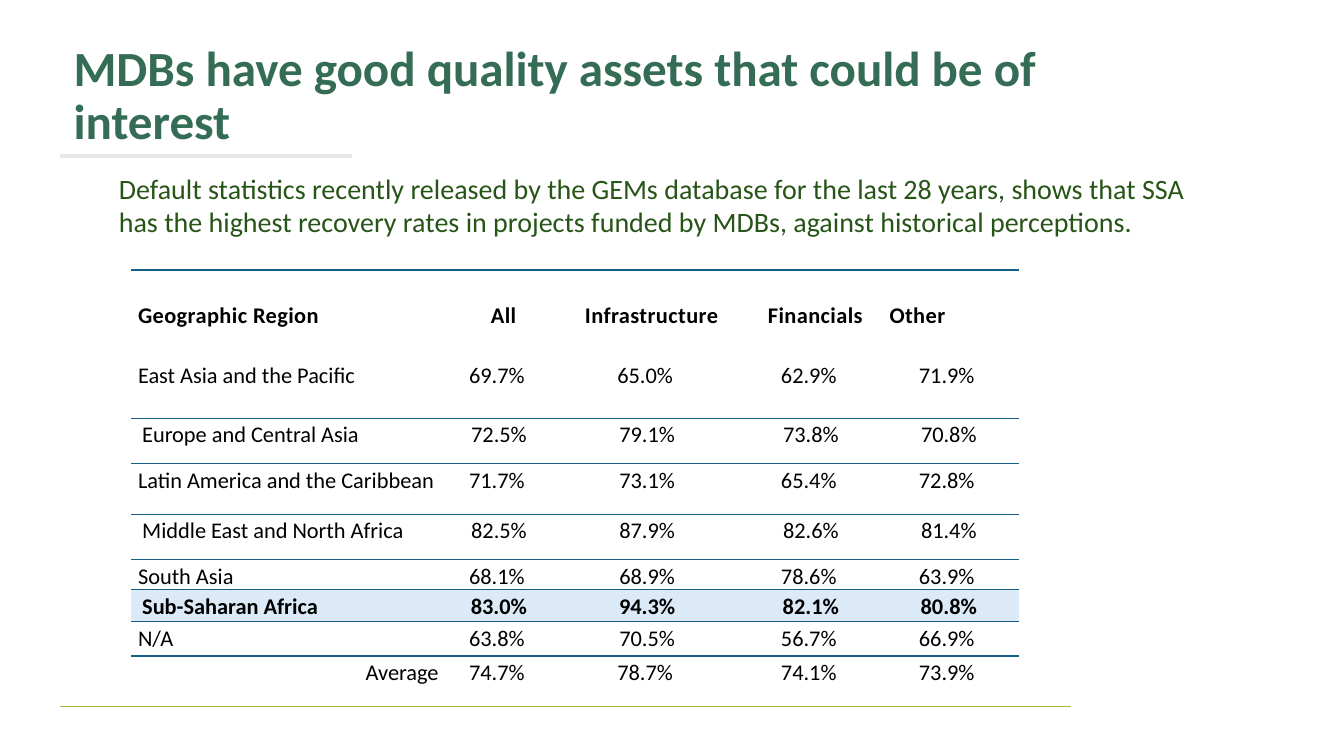
from dataclasses import dataclass

from lxml.etree import SubElement
from pptx import Presentation
from pptx.dml.color import RGBColor
from pptx.enum.shapes import MSO_CONNECTOR
from pptx.enum.text import MSO_ANCHOR as ANCHOR, PP_ALIGN as ALIGN
from pptx.oxml import parse_xml
from pptx.oxml.ns import nsdecls, qn
from pptx.util import Pt


@dataclass(frozen=True)
class Theme:
    """Colours and type sizes of the slide."""
    font: str = "Calibri"
    title: str = "356C55"
    lead: str = "275417"
    body: str = "000000"
    border: str = "156082"
    highlight: str = "DCEAF7"
    underline: str = "E8E8E8"
    footer: str = "A0BE44"
    title_size: float = 35.1
    lead_size: float = 20
    table_size: float = 16


THEME = Theme()
TITLE = "MDBs have good quality assets that could be of interest"
LEAD = ("Default statistics recently released by the GEMs database for the last 28 years, "
        "shows that SSA has the highest recovery rates in projects funded by MDBs, "
        "against historical perceptions.")
RATES = [
    ("Geographic Region", "All", "Infrastructure", "Financials", "Other"),
    ("East Asia and the Pacific", "69.7%", "65.0%", "62.9%", "71.9%"),
    ("Europe and Central Asia", "72.5%", "79.1%", "73.8%", "70.8%"),
    ("Latin America and the Caribbean", "71.7%", "73.1%", "65.4%", "72.8%"),
    ("Middle East and North Africa", "82.5%", "87.9%", "82.6%", "81.4%"),
    ("South Asia", "68.1%", "68.9%", "78.6%", "63.9%"),
    ("Sub-Saharan Africa", "83.0%", "94.3%", "82.1%", "80.8%"),
    ("N/A", "63.8%", "70.5%", "56.7%", "66.9%"),
    ("Average", "74.7%", "78.7%", "74.1%", "73.9%"),
]
COL_WIDTHS = [225.2, 77.8, 133.9, 100, 97.1]
ROW_HEIGHTS = [63.4, 42.4, 32.4, 36, 32.4, 20.2, 23, 24.5, 20.2]
TOP_BORDERS = {0: 1.5, 2: 0.75, 4: 0.75, 6: 0.75, 8: 1.5}
HEADER, HIGHLIGHT, AVERAGE = 0, 6, 8
INFRASTRUCTURE, OTHER = 2, 4
NO_STYLE = "{2D5ABB26-0587-4C30-8999-92F81FD0307C}"


def style_runs(p, size, color, bold=False):
    """Apply the theme font to the runs of a paragraph."""
    for r in p.runs:
        r.font.name = THEME.font
        r.font.size = Pt(size)
        r.font.bold = bold
        r.font.color.rgb = RGBColor.from_string(color)


def add_text(s, box, text, size, color, bold=False, inset=(7.2, 3.6), spacing=1.0):
    """Place one wrapped paragraph in a box."""
    tf = s.shapes.add_textbox(*map(Pt, box)).text_frame
    tf.word_wrap = True
    tf.margin_left = tf.margin_right = Pt(inset[0])
    tf.margin_top = tf.margin_bottom = Pt(inset[1])
    p = tf.paragraphs[0]
    p.text = text
    p.line_spacing = spacing
    style_runs(p, size, color, bold)


def add_rule(s, x, y, width, color, weight):
    """Draw a horizontal rule without shadow."""
    line = s.shapes.add_connector(MSO_CONNECTOR.STRAIGHT, Pt(x), Pt(y), Pt(x + width), Pt(y))
    line.line.color.rgb = RGBColor.from_string(color)
    line.line.width = Pt(weight)
    SubElement(line._element.spPr, qn("a:effectLst"))


def add_border(cell, side, weight):
    """Give one side of a cell a solid border."""
    cell._tc.get_or_add_tcPr().insert(0, parse_xml(
        f'<a:{side} {nsdecls("a")} w="{Pt(weight)}"><a:solidFill>'
        f'<a:srgbClr val="{THEME.border}"/></a:solidFill></a:{side}>'))


def format_cell(cell, row, col, text):
    """Fill and format one cell according to its row and column."""
    inset_row = row in TOP_BORDERS and row not in (HEADER, AVERAGE)
    inset_col = col == INFRASTRUCTURE and row not in (HEADER, 1, AVERAGE)
    indent = 5 if row == HEADER or col == 0 else 0
    cell.margin_left = Pt(indent + (3 if inset_row or inset_col else 0))
    cell.margin_right = Pt(1 if row == HEADER else 5.5)
    cell.margin_top = Pt(0 if row == HEADER else 1)
    cell.margin_bottom = 0
    cell.vertical_anchor = ANCHOR.MIDDLE if row == HEADER else ANCHOR.TOP
    if row == HIGHLIGHT:
        cell.fill.solid()
        cell.fill.fore_color.rgb = RGBColor.from_string(THEME.highlight)
    else:
        cell.fill.background()
    p = cell.text_frame.paragraphs[0]
    p.text = text
    p.line_spacing = 1.07
    if col == 0:
        p.alignment = ALIGN.RIGHT if row == AVERAGE else ALIGN.LEFT
    else:
        p.alignment = ALIGN.LEFT if (row, col) == (HEADER, OTHER) else ALIGN.CENTER
    style_runs(p, THEME.table_size, THEME.body, row in (HEADER, HIGHLIGHT))
    if row == HEADER:
        for r in p.runs:
            r.font._element.set("spc", "30")
    if row + 1 in TOP_BORDERS:
        add_border(cell, "lnB", TOP_BORDERS[row + 1])
    if row in TOP_BORDERS:
        add_border(cell, "lnT", TOP_BORDERS[row])


def add_rates_table(s, x, y):
    """Build the recovery rate table from its top left corner."""
    frame = s.shapes.add_table(len(RATES), len(COL_WIDTHS), Pt(x), Pt(y),
                               Pt(sum(COL_WIDTHS)), Pt(sum(ROW_HEIGHTS)))
    table = frame.table
    table.first_row = table.horz_banding = False
    table._tbl.tblPr.find(qn("a:tableStyleId")).text = NO_STYLE
    for column, width in zip(table.columns, COL_WIDTHS):
        column.width = Pt(width)
    for row, (height, values) in enumerate(zip(ROW_HEIGHTS, RATES)):
        table.rows[row].height = Pt(height)
        for col, text in enumerate(values):
            format_cell(table.cell(row, col), row, col, text)


def add_heading(s, x, y, width):
    """Place the title and the short rule under it."""
    add_text(s, (x, y, width, 67.7), TITLE, THEME.title_size, THEME.title,
             bold=True, inset=(0, 0), spacing=0.9)
    add_rule(s, x - 9.4, y + 79.9, 208, THEME.underline, 3)


def build_slide(prs):
    """Lay out the slide on the blank layout."""
    s = prs.slides.add_slide(prs.slide_layouts[6])
    add_rule(s, 43.2, 504.7, 722, THEME.footer, 0.6)
    add_heading(s, 52.6, 31.7, 744.5)
    add_rates_table(s, 93.6, 193)
    add_text(s, (77.8, 118.8, 781.2, 55.4), LEAD, THEME.lead_size, THEME.lead)


def main():
    """Create and save the presentation."""
    prs = Presentation()
    prs.slide_width, prs.slide_height = Pt(960), Pt(540)
    build_slide(prs)
    prs.save("out.pptx")


if __name__ == "__main__":
    main()
